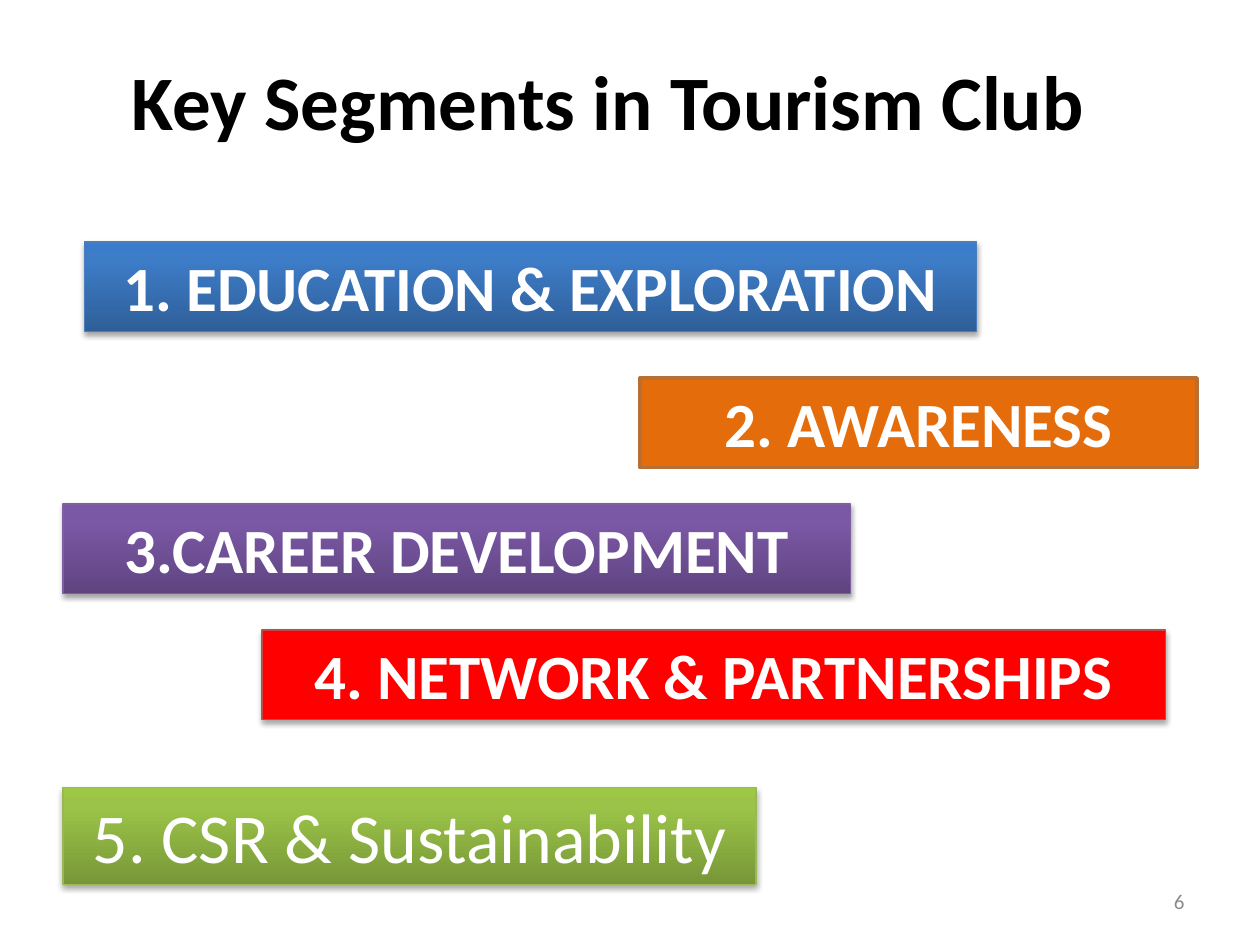
from lxml import etree
from pptx import Presentation, util as u
from pptx.dml.color import RGBColor
from pptx.enum import shapes, text
from pptx.oxml import ns, parse_xml

COLOURS = {
    "white": "FFFFFF", "black": "000000", "grey": "8C8C8C",
    "red": "FF0000", "red_line": "BF4C48",
    "orange": "E46C0A", "orange_line": "B76F34",
    "blue_line": "4B7EBC", "purple_line": "7D60A0", "green_line": "98B955",
    "blue_dark": "2F5F99", "blue_mid": "3D7CC7", "blue_light": "3A7CCB",
    "purple_dark": "5F4480", "purple_mid": "7B58A6", "purple_light": "7C57A8",
    "green_dark": "779737", "green_mid": "9BC348", "green_light": "9DC746",
}
GRADIENTS = ("blue", "purple", "green")
STOPS = (("dark", 0), ("mid", 80), ("light", 100))
BAR_FONT = {"size": u.Pt(36), "bold": True}
BARS = [
    ("1. EDUCATION & EXPLORATION", (0.67, 1.92, 7.08, 0.71), "blue", {}),
    ("3.CAREER DEVELOPMENT", (0.5, 4, 6.25, 0.71), "purple", {}),
    ("4. NETWORK & PARTNERSHIPS", (2.08, 5, 7.17, 0.71), "red", {}),
    ("2. AWARENESS", (5.08, 3, 4.42, 0.71), "orange", {"line": 2, "shadow": False}),
    ("5. CSR & Sustainability", (0.5, 6.25, 5.5, 0.77), "green",
     {"font": {"size": u.Pt(40), "bold": False}}),
]


def rgb(name):
    """Return the named colour."""
    return RGBColor.from_string(COLOURS[name])


def place(shape, box):
    """Move a shape to a box given in inches."""
    for name, value in zip(("left", "top", "width", "height"), box):
        setattr(shape, name, u.Inches(value))


def write(shape, wording, colour, font, alignment):
    """Write one formatted paragraph, centred vertically."""
    frame = shape.text_frame
    frame.word_wrap = True
    frame.vertical_anchor = text.MSO_ANCHOR.MIDDLE
    paragraph = frame.paragraphs[0]
    paragraph.alignment = alignment
    run = paragraph.add_run()
    run.text = wording
    for name, value in {"name": "Calibri", **font}.items():
        setattr(run.font, name, value)
    run.font.color.rgb = rgb(colour)


def fill_gradient(shape, colour):
    """Fill a shape with a three-stop gradient, dark at the bottom."""
    shape.fill.gradient()
    shape.fill.gradient_angle = 90
    stop_list = shape.element.spPr.find(".//" + ns.qn("a:gsLst"))
    for stop in list(stop_list):
        stop_list.remove(stop)
    for shade, position in STOPS:
        stop = etree.SubElement(stop_list, ns.qn("a:gs"), pos=str(position * 1000))
        etree.SubElement(stop, ns.qn("a:srgbClr"), val=COLOURS[f"{colour}_{shade}"])


def add_shadow(shape):
    """Give a shape a soft shadow below it."""
    effects = shape.element.spPr.find(ns.qn("a:effectLst"))
    effects.append(parse_xml(
        f'<a:outerShdw {ns.nsdecls("a")} blurRad="40000" dist="23000" dir="5400000" '
        f'rotWithShape="0"><a:srgbClr val="{COLOURS["black"]}">'
        '<a:alpha val="35000"/></a:srgbClr></a:outerShdw>'))


def add_bar(slide, wording, box, colour, style):
    """Add one segment bar."""
    shape = slide.shapes.add_shape(
        shapes.MSO_SHAPE.RECTANGLE, *(u.Inches(value) for value in box))
    if colour in GRADIENTS:
        fill_gradient(shape, colour)
    else:
        shape.fill.solid()
        shape.fill.fore_color.rgb = rgb(colour)
    shape.line.color.rgb = rgb(f"{colour}_line")
    shape.line.width = u.Pt(style.get("line", 0.75))
    shape.shadow.inherit = False
    if style.get("shadow", True):
        add_shadow(shape)
    write(shape, wording, "white", style.get("font", BAR_FONT), text.PP_ALIGN.CENTER)


def add_title(slide, box):
    """Place and format the title."""
    title = slide.shapes.title
    place(title, box)
    title.fill.solid()
    title.fill.fore_color.rgb = rgb("white")
    write(title, "Key Segments in Tourism Club", "black",
          {"size": u.Pt(44), "bold": True}, text.PP_ALIGN.CENTER)


def add_page_number(slide, box):
    """Add the page number."""
    shape = slide.shapes.add_textbox(*(u.Inches(value) for value in box))
    write(shape, "6", "grey", {"size": u.Pt(12)}, text.PP_ALIGN.RIGHT)


def main():
    """Build and save the slide."""
    presentation = Presentation()
    presentation.slide_width = u.Inches(10)
    presentation.slide_height = u.Inches(7.5)
    slide = presentation.slides.add_slide(presentation.slide_layouts[5])
    add_title(slide, (0.33, 0.17, 9, 1.25))
    for bar in BARS:
        add_bar(slide, *bar)
    add_page_number(slide, (7.17, 6.95, 2.33, 0.4))
    presentation.save("out.pptx")


if __name__ == "__main__":
    main()
